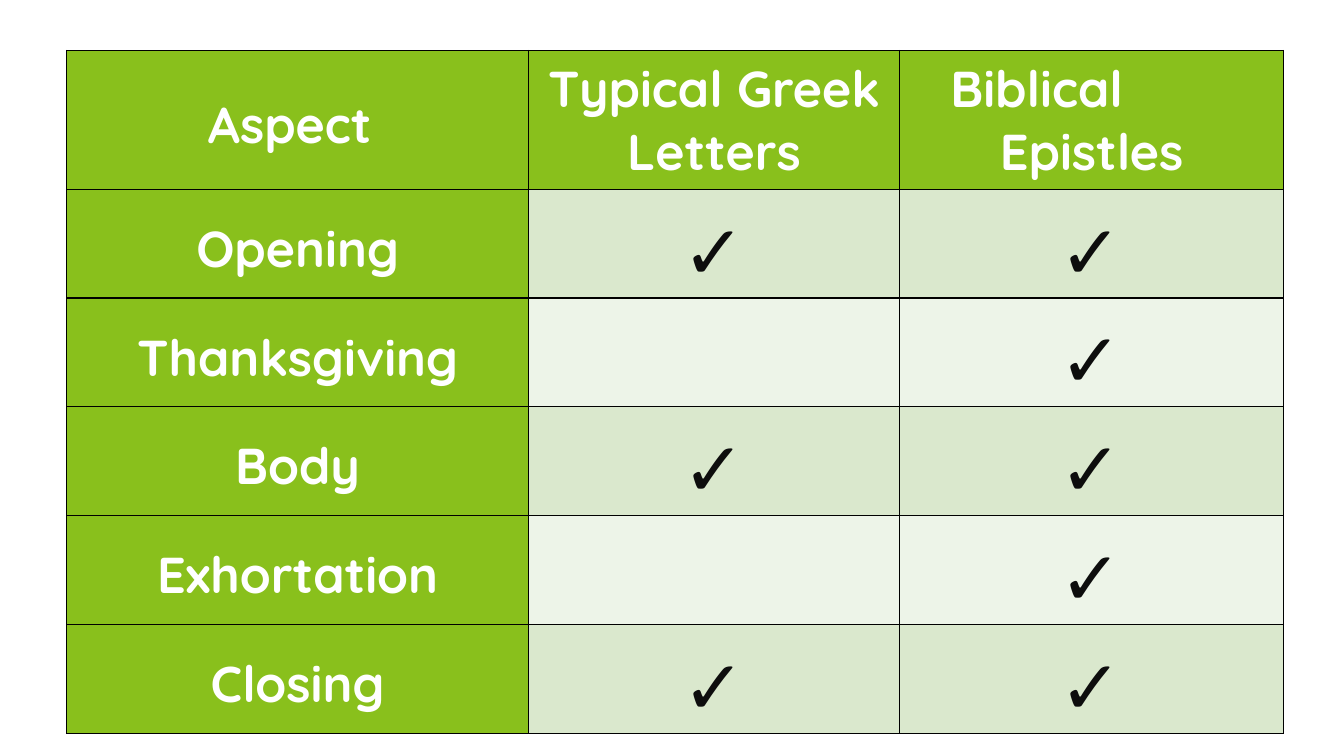
from lxml import etree
from pptx import Presentation
from pptx import util as u
from pptx.dml import color
from pptx.enum import text
from pptx.oxml import ns

THEME = {
    "font": "Quicksand",
    "label_size": 36,
    "check_size": 54,
    "label": "FFFFFF",
    "check": "0D0D0D",
    "header": "89C01C",
    "bands": ["DAE8CD", "EDF4E8"],
    "border": "000000",
}
CHECK = "✓"
ROWS = [
    ["Aspect", "Typical Greek Letters", "Biblical\nEpistles"],
    ["Opening", CHECK, CHECK],
    ["Thanksgiving", "", CHECK],
    ["Body", CHECK, CHECK],
    ["Exhortation", "", CHECK],
    ["Closing", CHECK, CHECK],
]
COLUMN_WIDTHS = [11.64, 9.35, 9.68]
ROW_HEIGHTS = [3.5] + [2.52] * 5


def set_values(target, values):
    for name, value in values.items():
        setattr(target, name, value)


def add_borders(cell):
    properties = cell._tc.get_or_add_tcPr()
    for side in ("lnL", "lnR", "lnT", "lnB"):
        line = etree.SubElement(properties, ns.qn(f"a:{side}"), w=str(u.Pt(1)))
        fill = etree.SubElement(line, ns.qn("a:solidFill"))
        etree.SubElement(fill, ns.qn("a:srgbClr"), val=THEME["border"])


presentation = Presentation()
set_values(presentation, {"slide_width": u.Cm(33.87), "slide_height": u.Cm(19.05)})
slide = presentation.slides.add_slide(presentation.slide_layouts[6])

frame = slide.shapes.add_table(
    len(ROWS), len(COLUMN_WIDTHS), u.Cm(1.68), u.Cm(1.27),
    u.Cm(sum(COLUMN_WIDTHS)), u.Cm(sum(ROW_HEIGHTS)),
)
table = frame.table
set_values(table, {"first_row": False, "horz_banding": False})
for column, width in zip(table.columns, COLUMN_WIDTHS):
    column.width = u.Cm(width)
for row, height in zip(table.rows, ROW_HEIGHTS):
    row.height = u.Cm(height)

for row_index, row_words in enumerate(ROWS):
    for column_index, words in enumerate(row_words):
        cell = table.cell(row_index, column_index)
        is_label = row_index == 0 or column_index == 0
        role = "label" if is_label else "check"
        background = THEME["header"] if is_label else THEME["bands"][(row_index - 1) % 2]
        add_borders(cell)
        cell.fill.solid()
        cell.fill.fore_color.rgb = color.RGBColor.from_string(background)
        set_values(cell, {
            "margin_left": u.Cm(0.18), "margin_right": u.Cm(0.18),
            "margin_top": 0, "margin_bottom": 0,
            "vertical_anchor": text.MSO_ANCHOR.MIDDLE,
        })
        if not words:
            continue
        cell.text_frame.text = words
        for paragraph in cell.text_frame.paragraphs:
            set_values(paragraph, {
                "alignment": text.PP_ALIGN.CENTER,
                "line_spacing": 1.0 if row_index == 0 and column_index else 1.15,
                "space_before": u.Pt(6), "space_after": u.Pt(6),
            })
            font = paragraph.runs[0].font
            set_values(font, {
                "name": THEME["font"], "size": u.Pt(THEME[f"{role}_size"]), "bold": is_label,
            })
            font.color.rgb = color.RGBColor.from_string(THEME[role])

table.cell(0, 0).margin_right = u.Cm(0.58)
biblical, epistles = table.cell(0, 2).text_frame.paragraphs
set_values(biblical, {"alignment": text.PP_ALIGN.LEFT, "space_after": 0})
biblical._p.get_or_add_pPr().set("marL", str(u.Cm(1.1)))
epistles.space_before = 0

presentation.save("out.pptx")
